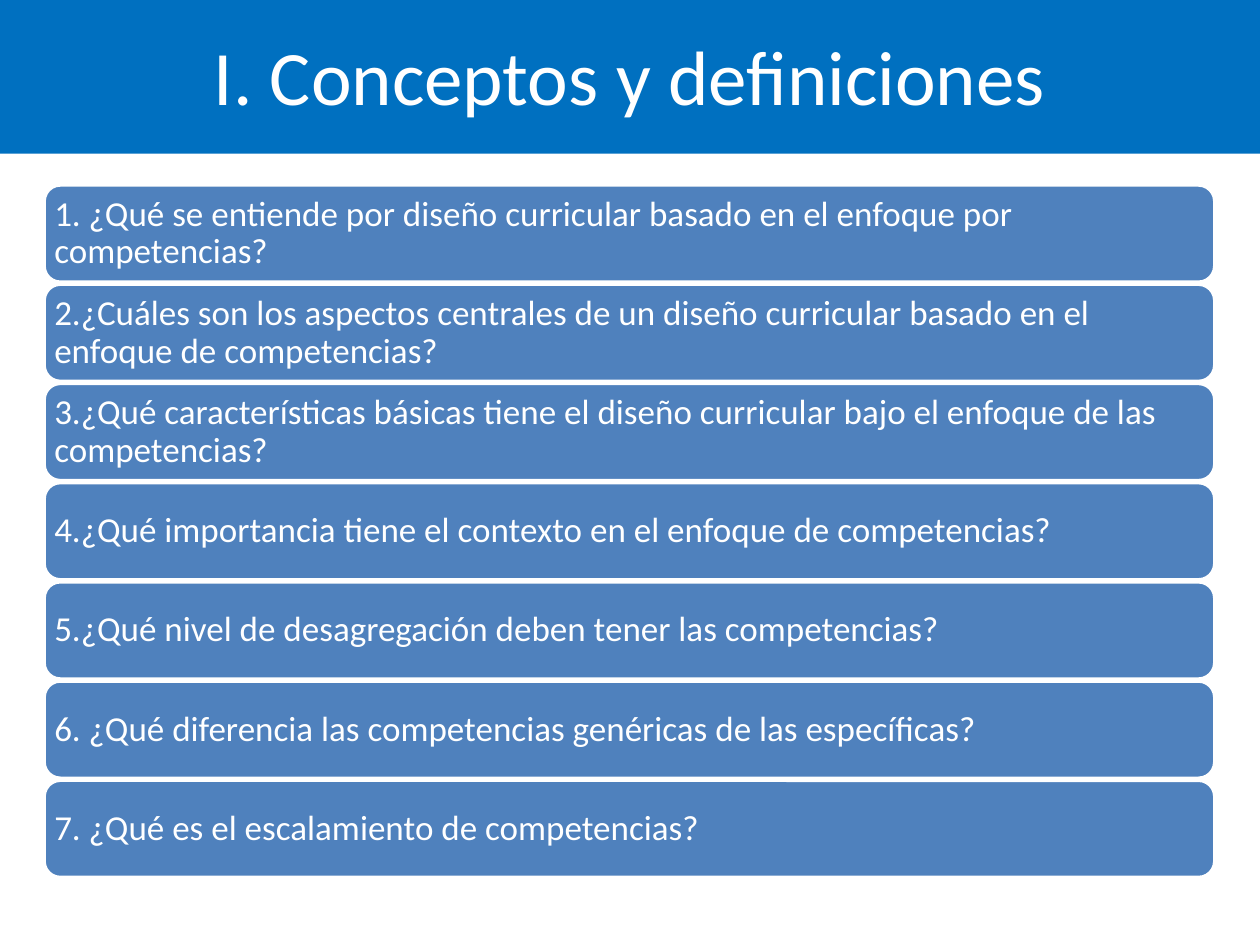
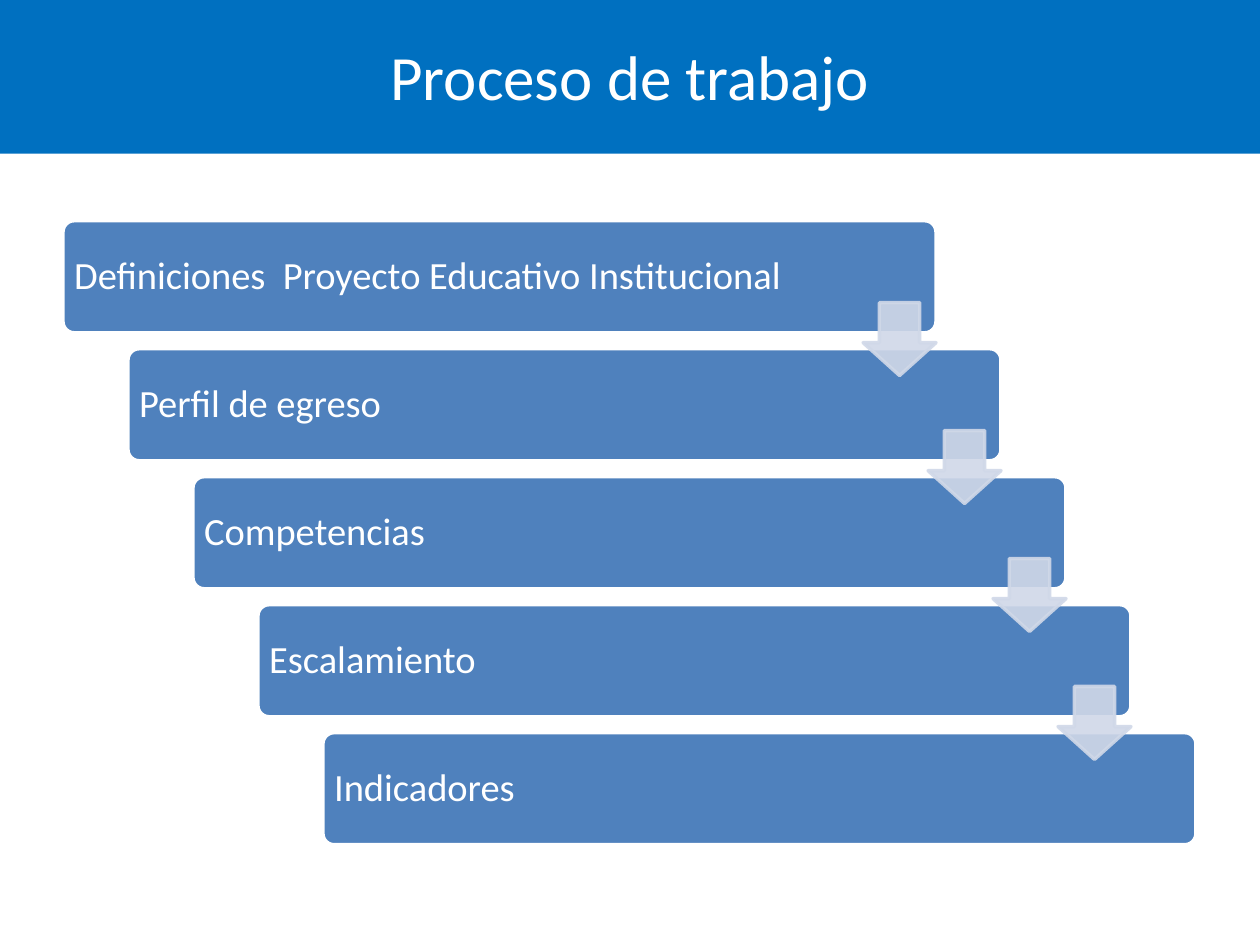
"""Build two slides on competency-based curriculum: key questions and work process."""
from lxml.etree import SubElement
from pptx import Presentation
from pptx.dml.color import RGBColor
from pptx.enum.shapes import MSO_SHAPE
from pptx.enum.text import MSO_ANCHOR, PP_ALIGN
from pptx.oxml.ns import qn
from pptx.util import Cm, Pt

COLORS = {"band": "0070C0", "bar": "4F81BD", "arrow": "D0D8E8", "white": "FFFFFF"}
FONT = "Calibri"

QUESTIONS = [
    "1. ¿Qué se entiende por diseño curricular basado en el enfoque por competencias?",
    "2.¿Cuáles son los aspectos centrales de un diseño curricular basado en el enfoque de competencias?",
    "3.¿Qué características básicas tiene el diseño curricular bajo el enfoque de las competencias?",
    "4.¿Qué importancia tiene el contexto en el enfoque de competencias?",
    "5.¿Qué nivel de desagregación deben tener las competencias?",
    "6. ¿Qué diferencia las competencias genéricas de las específicas?",
    "7. ¿Qué es el escalamiento de competencias?",
]
STEPS = [
    "Definiciones  Proyecto Educativo Institucional",
    "Perfil de egreso",
    "Competencias",
    "Escalamiento",
    "Indicadores",
]


def add_block(page, kind, left, top, width, height, fill, line=None):
    block = page.shapes.add_shape(kind, Cm(left), Cm(top), Cm(width), Cm(height))
    block.shadow.inherit = False
    block.fill.solid()
    block.fill.fore_color.rgb = RGBColor.from_string(COLORS[fill])
    if line:
        block.line.color.rgb = RGBColor.from_string(COLORS[line])
        block.line.width = Pt(2)
    else:
        block.line.fill.background()
    return block


def write_text(block, text, size, align, inset, spacing):
    frame = block.text_frame
    frame.word_wrap = True
    frame.vertical_anchor = MSO_ANCHOR.MIDDLE
    frame.margin_left = frame.margin_right = Cm(inset)
    frame.margin_top = frame.margin_bottom = Cm(inset)
    paragraph = frame.paragraphs[0]
    paragraph.text = text
    paragraph.alignment = align
    paragraph.line_spacing = spacing
    paragraph.font.name = FONT
    paragraph.font.size = Pt(size)
    paragraph.font.color.rgb = RGBColor.from_string(COLORS["white"])


deck = Presentation()
deck.slide_width, deck.slide_height = Cm(25.4), Cm(19.05)
pages = []
for title, size in [("I. Conceptos y definiciones", 44), ("Proceso de trabajo", 36)]:
    page = deck.slides.add_slide(deck.slide_layouts[6])
    band = add_block(page, MSO_SHAPE.RECTANGLE, 0, -0.08, 25.4, 3.18, "band")
    write_text(band, title, size, PP_ALIGN.CENTER, 0.13, 1.0)
    pages.append(page)
questions_page, process_page = pages

for index, question in enumerate(QUESTIONS):
    bar = add_block(questions_page, MSO_SHAPE.ROUNDED_RECTANGLE,
                    0.89, 3.73 + 2 * index, 23.6, 1.96, "bar", "white")
    write_text(bar, question, 20, PP_ALIGN.LEFT, 0.11, 0.9)

STEP_RIGHT, STEP_DOWN = 1.31, 2.58
for index, step in enumerate(STEPS):
    bar = add_block(process_page, MSO_SHAPE.ROUNDED_RECTANGLE,
                    1.27 + STEP_RIGHT * index, 4.45 + STEP_DOWN * index,
                    17.6, 2.26, "bar", "white")
    bar.adjustments[0] = 0.1
    write_text(bar, step, 22, PP_ALIGN.LEFT, 0.16, 0.9)

for index in range(len(STEPS) - 1):
    arrow = add_block(process_page, MSO_SHAPE.DOWN_ARROW,
                      17.4 + STEP_RIGHT * index, 6.1 + STEP_DOWN * index,
                      1.47, 1.47, "arrow", "arrow")
    arrow.adjustments[0] = 0.55
    arrow.adjustments[1] = 0.45
    for color in arrow.element.spPr.iter(qn("a:srgbClr")):
        SubElement(color, qn("a:alpha"), val="90000")

deck.save("out.pptx")
